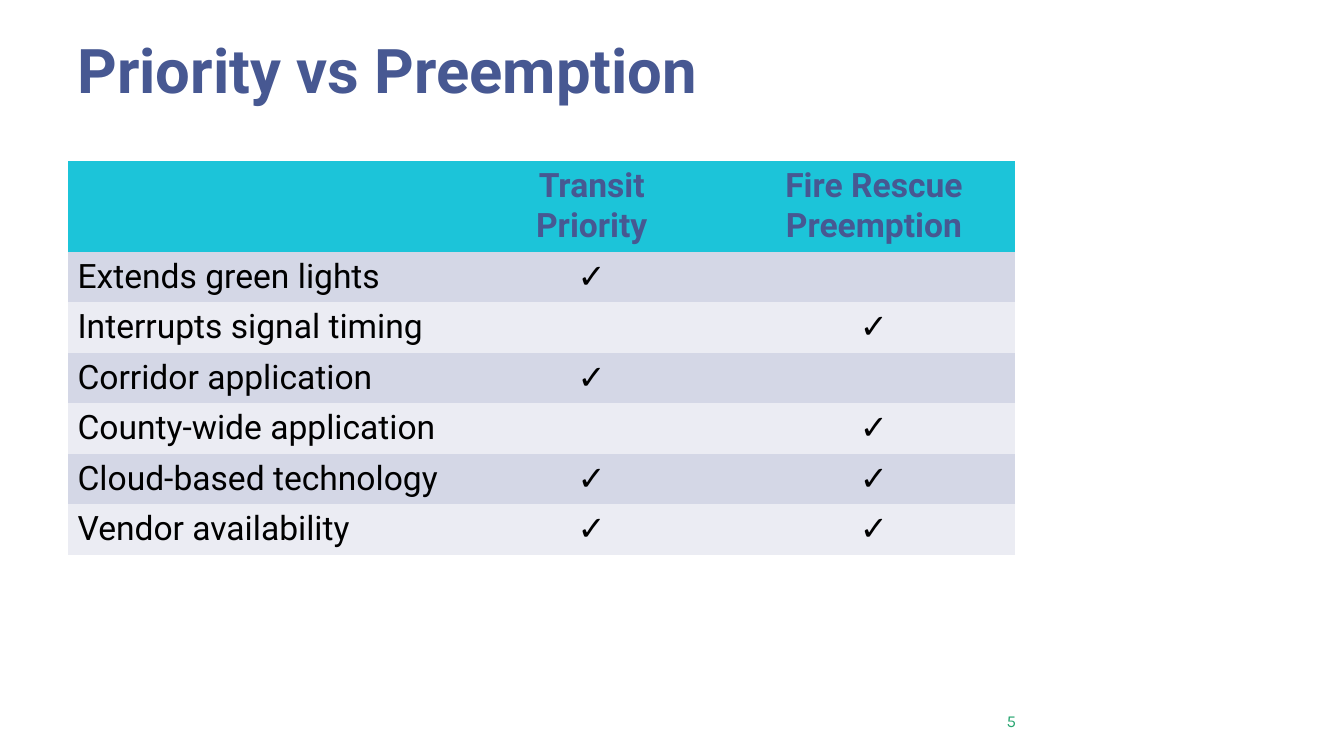
import pptx
import pptx.util
import pptx.dml.color
import pptx.enum.text
import pptx.oxml.ns

Pt = pptx.util.Pt
ALIGN = pptx.enum.text.PP_ALIGN
MIDDLE = pptx.enum.text.MSO_ANCHOR.MIDDLE

COLORS = {
    "navy": "475892",
    "cyan": "1CC4D9",
    "band_dark": "D4D7E6",
    "band_light": "EBECF3",
    "black": "000000",
    "green": "27A570",
}
TITLE = {"size": Pt(44), "name": "Roboto", "bold": True}
HEADER = {"size": Pt(24), "name": "Roboto", "bold": True}
BODY = {"size": Pt(24), "name": "Roboto", "bold": False}
NUMBER = {"size": Pt(12), "name": "Karla", "bold": False}
NO_STYLE_NO_GRID = "{2D5ABB26-0587-4C30-8999-92F81FD0307C}"


def write(tf, text, fmt, color, align):
    """Fill a text frame with one paragraph per line of text."""
    for i, line in enumerate(text.split("\n")):
        p = tf.paragraphs[0] if i == 0 else tf.add_paragraph()
        p.alignment = align
        r = p.add_run()
        r.text = line
        for key, value in fmt.items():
            setattr(r.font, key, value)
        r.font.color.rgb = pptx.dml.color.RGBColor.from_string(COLORS[color])


prs = pptx.Presentation()
prs.slide_width, prs.slide_height = Pt(960), Pt(540)
s = prs.slides.add_slide(prs.slide_layouts[6])

# Title and page number
for text, box, fmt, color, align, spacing in [
    ("Priority vs Preemption", (48.24, 0, 722.88, 104.4), TITLE, "navy", ALIGN.LEFT, 0.9),
    ("5", (516.96, 500.4, 216, 28.8), NUMBER, "green", ALIGN.RIGHT, 1.0),
]:
    tf = s.shapes.add_textbox(*[Pt(v) for v in box]).text_frame
    tf.word_wrap = True
    tf.vertical_anchor = MIDDLE
    write(tf, text, fmt, color, align)
    tf.paragraphs[0].line_spacing = spacing

# Comparison table
rows = [
    ("", "Transit\nPriority", "Fire Rescue Preemption"),
    ("Extends green lights", "✓", ""),
    ("Interrupts signal timing", "", "✓"),
    ("Corridor application", "✓", ""),
    ("County-wide application", "", "✓"),
    ("Cloud-based technology", "✓", "✓"),
    ("Vendor availability", "✓", "✓"),
]
col_widths = [273.6, 201.6, 201.6]
header_height, row_height = 63.6, 35.45

frame = s.shapes.add_table(
    len(rows), len(col_widths), Pt(48.24), Pt(115.2),
    Pt(sum(col_widths)), Pt(header_height + row_height * (len(rows) - 1)))
table = frame.table
table.horz_banding = False
style = table._tbl.tblPr.find(pptx.oxml.ns.qn("a:tableStyleId"))
style.text = NO_STYLE_NO_GRID

for column, width in zip(table.columns, col_widths):
    column.width = Pt(width)

for i, row in enumerate(rows):
    table.rows[i].height = Pt(row_height if i else header_height)
    if i == 0:
        fill, fmt, color = "cyan", HEADER, "navy"
    else:
        fill, fmt, color = ("band_dark" if i % 2 else "band_light"), BODY, "black"
    for j, text in enumerate(row):
        cell = table.cell(i, j)
        cell.fill.solid()
        cell.fill.fore_color.rgb = pptx.dml.color.RGBColor.from_string(COLORS[fill])
        if text:
            write(cell.text_frame, text, fmt, color, ALIGN.CENTER if j else ALIGN.LEFT)

prs.save("out.pptx")
